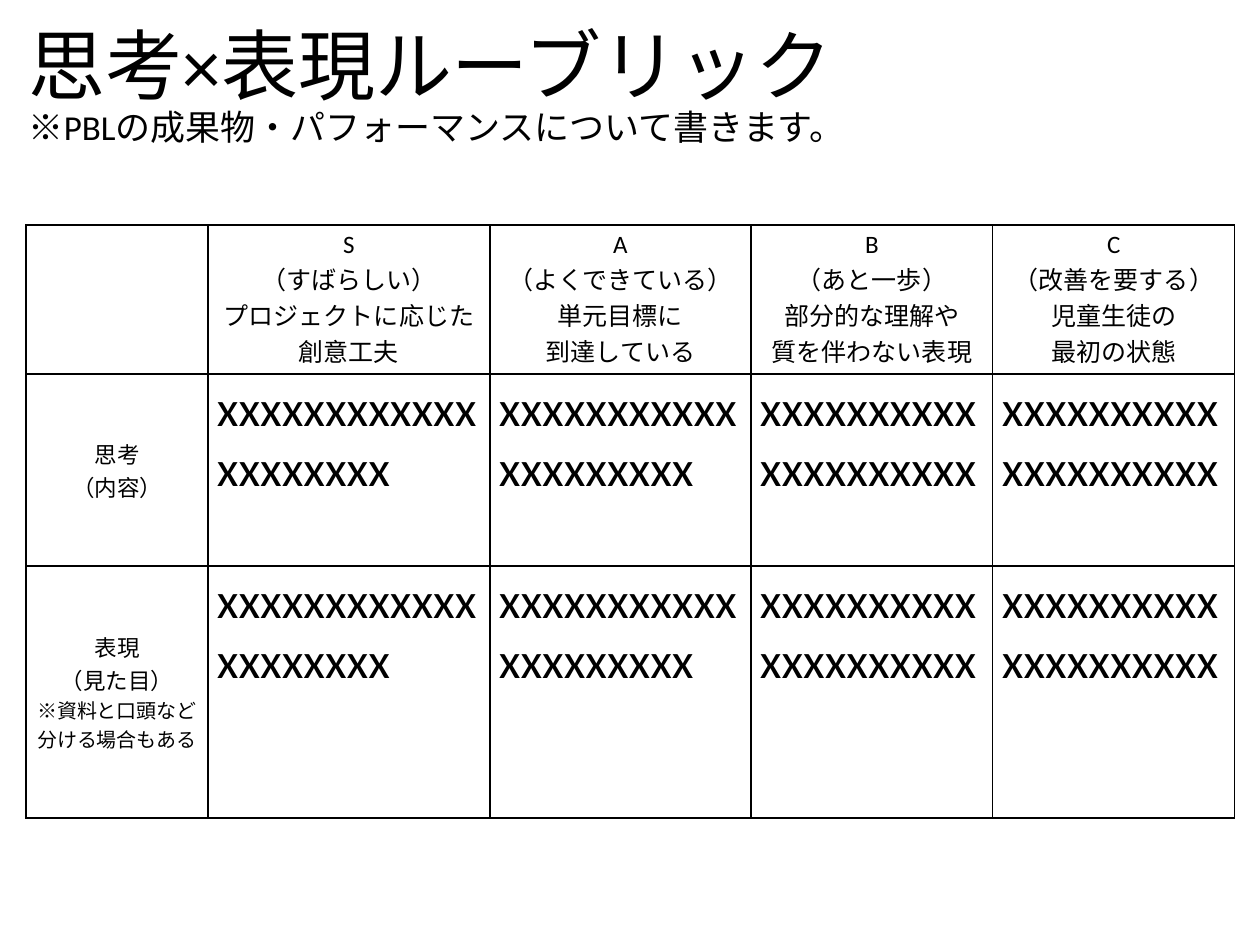
from lxml import etree
from pptx import Presentation
from pptx.dml.color import RGBColor
from pptx.enum.text import MSO_ANCHOR, MSO_AUTO_SIZE, PP_ALIGN
from pptx.oxml.ns import qn
from pptx.util import Pt

LEFT, CENTER = PP_ALIGN.LEFT, PP_ALIGN.CENTER
TOP, MIDDLE = MSO_ANCHOR.TOP, MSO_ANCHOR.MIDDLE
PX = 914400 // 90

THEME = {
    "font": "Calibri", "ink": "000000", "border": 1,
    "title": 61.6, "subtitle": 28, "header": 20, "label": 18, "note": 16, "sample": 40,
}

# A paragraph is a list of (text, size name) lines.
TITLE = [("思考×表現ルーブリック", "title"),
         ("※PBLの成果物・パフォーマンスについて書きます。", "subtitle")]
LEVELS = [
    [["S", "（すばらしい）"], ["プロジェクトに応じた創意工夫"]],
    [["A", "（よくできている）"], ["単元目標に"], ["到達している"]],
    [["B", "（あと一歩）", "部分的な理解や", "質を伴わない表現"]],
    [["C", "（改善を要する）"], ["児童生徒の", "最初の状態"]],
]
CRITERIA = [
    [[("思考", "label"), ("（内容）", "label")]],
    [[("表現", "label"), ("（見た目）", "label")],
     [("※資料と口頭など分ける場合もある", "note")]],
]
SAMPLE = [[("x" * 20, "sample")]]

TITLE_BOX = (20, 18, 1220, 140)
TABLE_AT = (26, 225)
COLUMNS = [182, 282, 261, 242, 242]
ROWS = [149, 192, 252]


def write(tf, paragraphs, align):
    for i, lines in enumerate(paragraphs):
        p = tf.paragraphs[0] if i == 0 else tf.add_paragraph()
        p.alignment = align
        for j, (text, size) in enumerate(lines):
            if j:
                p.add_line_break()
            r = p.add_run()
            r.text = text
            r.font.name = THEME["font"]
            r.font.size = Pt(THEME[size])
            r.font.bold = False
            r.font.color.rgb = RGBColor.from_string(THEME["ink"])


def set_borders(cell):
    tc_pr = cell._tc.get_or_add_tcPr()
    for i, side in enumerate(("lnL", "lnR", "lnT", "lnB")):
        ln = etree.Element(qn(f"a:{side}"), w=str(Pt(THEME["border"])))
        fill = etree.SubElement(ln, qn("a:solidFill"))
        etree.SubElement(fill, qn("a:srgbClr"), val=THEME["ink"])
        tc_pr.insert(i, ln)


def add_title(s):
    title = s.shapes.title
    title.left, title.top, title.width, title.height = [v * PX for v in TITLE_BOX]
    tf = title.text_frame
    tf.auto_size = MSO_AUTO_SIZE.NONE
    tf.word_wrap = True
    tf.vertical_anchor = MIDDLE
    write(tf, [TITLE], LEFT)
    tf.paragraphs[0].line_spacing = 0.9


def add_rubric(s):
    headers = [[[(text, "header") for text in lines] for lines in level]
               for level in LEVELS]
    grid = [[[]] + headers] + [[label] + [SAMPLE] * len(LEVELS) for label in CRITERIA]
    box = [v * PX for v in (*TABLE_AT, sum(COLUMNS), sum(ROWS))]
    table = s.shapes.add_table(len(ROWS), len(COLUMNS), *box).table
    table.first_row = table.horz_banding = False
    for column, width in zip(table.columns, COLUMNS):
        column.width = width * PX
    for row, height in zip(table.rows, ROWS):
        row.height = height * PX
    for y, row in enumerate(grid):
        for x, content in enumerate(row):
            cell = table.cell(y, x)
            cell.fill.background()
            set_borders(cell)
            cell.vertical_anchor = MIDDLE if x == 0 else TOP
            write(cell.text_frame, content, CENTER if x == 0 or y == 0 else LEFT)


def main():
    prs = Presentation()
    prs.slide_width, prs.slide_height = 1260 * PX, 945 * PX
    s = prs.slides.add_slide(prs.slide_layouts[5])
    add_title(s)
    add_rubric(s)
    prs.save("out.pptx")


if __name__ == "__main__":
    main()
